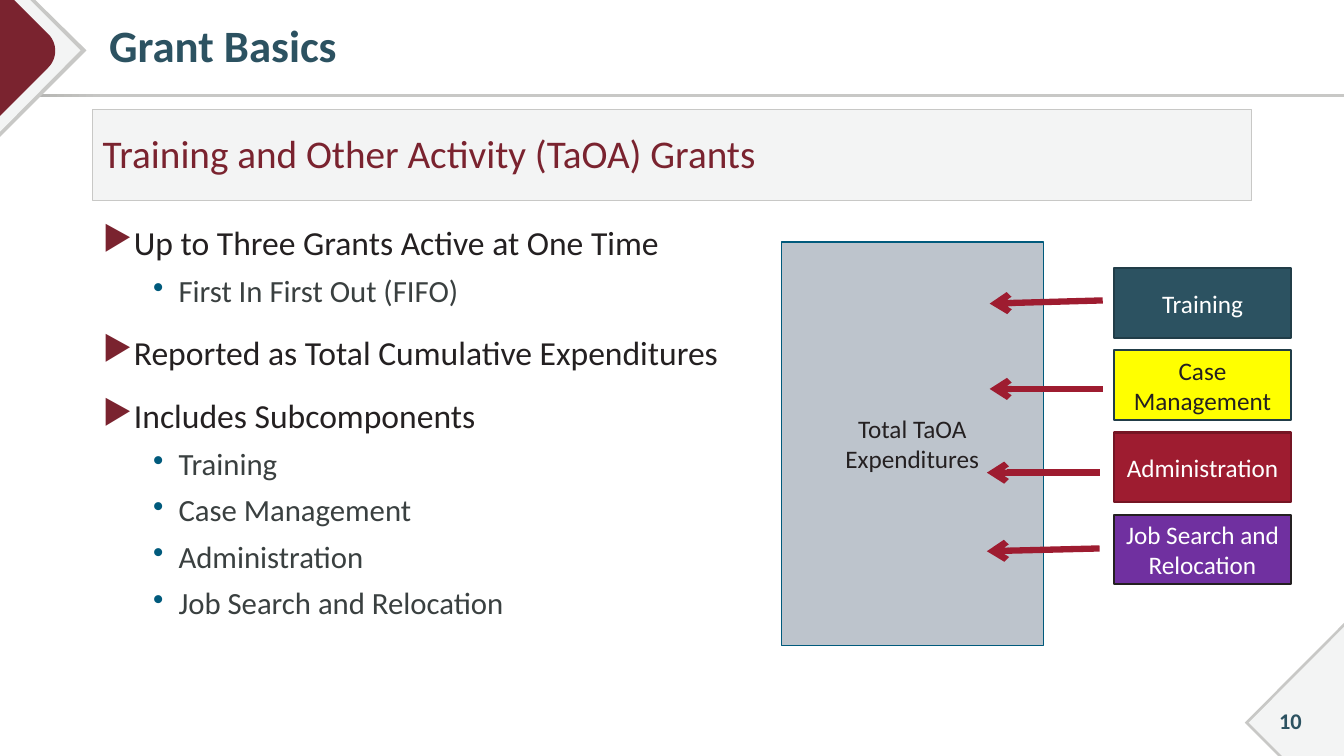
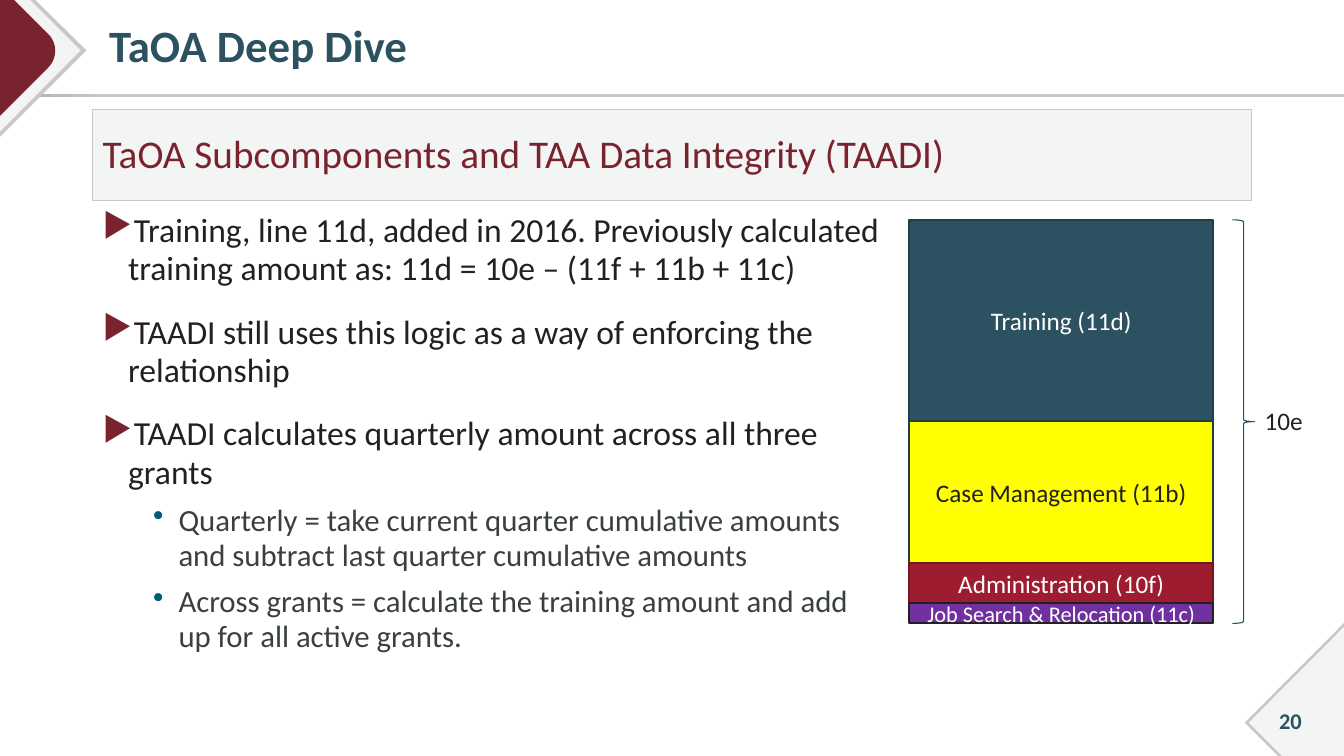
from collections import namedtuple

from lxml import etree
from pptx import Presentation
from pptx.dml.color import RGBColor
from pptx.enum.shapes import MSO_CONNECTOR, MSO_SHAPE
from pptx.enum.text import MSO_ANCHOR, PP_ALIGN
from pptx.oxml.ns import qn
from pptx.util import Cm, Pt

RECTANGLE = MSO_SHAPE.RECTANGLE
RIGHT_BRACE = MSO_SHAPE.RIGHT_BRACE
STRAIGHT = MSO_CONNECTOR.STRAIGHT
TOP, MIDDLE = MSO_ANCHOR.TOP, MSO_ANCHOR.MIDDLE
LEFT, CENTER = PP_ALIGN.LEFT, PP_ALIGN.CENTER

FONT = "Calibri"
SLIDE_WIDTH, SLIDE_HEIGHT = 33.87, 19.05

TEAL = RGBColor(0x2C, 0x52, 0x61)
DARK_TEAL = RGBColor(0x21, 0x3D, 0x48)
BLUE = RGBColor(0x00, 0x5A, 0x7C)
MAROON = RGBColor(0x7A, 0x23, 0x2F)
RED = RGBColor(0x9E, 0x1C, 0x30)
DARK_RED = RGBColor(0x75, 0x15, 0x24)
YELLOW = RGBColor(0xFF, 0xFF, 0x00)
PURPLE = RGBColor(0x70, 0x30, 0xA0)
INK = RGBColor(0x24, 0x20, 0x21)
SLATE = RGBColor(0x3A, 0x40, 0x40)
WHITE = RGBColor(0xFF, 0xFF, 0xFF)
PALE = RGBColor(0xF3, 0xF4, 0xF4)
GRAY = RGBColor(0xC8, 0xC8, 0xC6)
DARK_GRAY = RGBColor(0xAB, 0xAB, 0xA8)
BLUE_GRAY = RGBColor(0xBD, 0xC4, 0xCC)

# Each grant component keeps its colours on both slides
Component = namedtuple("Component", "fill outline text")
TRAINING = Component(TEAL, DARK_TEAL, WHITE)
CASE_MANAGEMENT = Component(YELLOW, DARK_TEAL, INK)
ADMINISTRATION = Component(RED, DARK_RED, WHITE)
JOB_SEARCH = Component(PURPLE, INK, WHITE)

# Bullet levels of the body text
Level = namedtuple("Level", "symbol symbol_color margin size color space")
LEVELS = (
    Level("▶", MAROON, 0.64, 24, INK, 18),
    Level("•", BLUE, 1.91, 22, SLATE, 8),
)
HANGING = 0.64


def add_run(paragraph, text, size, color, bold=False):
    run = paragraph.add_run()
    run.text = text
    run.font.name = FONT
    run.font.size = Pt(size)
    run.font.bold = bold
    run.font.color.rgb = color


def write_line(shape, text, size, color, align=LEFT, anchor=MIDDLE, bold=False, wrap=True):
    frame = shape.text_frame
    frame.word_wrap = wrap
    frame.vertical_anchor = anchor
    paragraph = frame.paragraphs[0]
    paragraph.alignment = align
    add_run(paragraph, text, size, color, bold)
    return frame


def add_textbox(slide, box):
    return slide.shapes.add_textbox(*map(Cm, box))


def add_preset(slide, kind, box, fill=None, outline=None, width=0.75):
    shape = slide.shapes.add_shape(kind, *map(Cm, box))
    shape.shadow.inherit = False
    if fill is None:
        shape.fill.background()
    else:
        shape.fill.solid()
        shape.fill.fore_color.rgb = fill
    if outline is None:
        shape.line.fill.background()
    else:
        shape.line.color.rgb = outline
        shape.line.width = Pt(width)
    return shape


def add_component(slide, box, label, component, size=18):
    shape = add_preset(slide, RECTANGLE, box, component.fill, component.outline, 1.5)
    write_line(shape, label, size, component.text, CENTER)


def add_outline(slide, points, fill):
    start, *rest = [(Cm(x), Cm(y)) for x, y in points]
    builder = slide.shapes.build_freeform(*start)
    builder.add_line_segments(rest, close=True)
    shape = builder.convert_to_shape()
    shape.shadow.inherit = False
    shape.fill.solid()
    shape.fill.fore_color.rgb = fill
    shape.line.fill.background()


def curve_points(controls, steps=16):
    """Points along a cubic Bezier curve."""
    points = []
    for step in range(steps + 1):
        t = step / steps
        weights = ((1 - t) ** 3, 3 * t * (1 - t) ** 2, 3 * t**2 * (1 - t), t**3)
        points.append(tuple(sum(w * c for w, c in zip(weights, axis)) for axis in zip(*controls)))
    return points


def add_arrow(slide, start, end):
    connector = slide.shapes.add_connector(STRAIGHT, *map(Cm, start + end))
    connector.line.color.rgb = RED
    connector.line.width = Pt(4.5)
    properties = connector.element.spPr
    etree.SubElement(properties.find(qn("a:ln")), qn("a:tailEnd"), type="arrow")
    etree.SubElement(properties, qn("a:effectLst"))


def set_bullet(paragraph, level):
    properties = paragraph._p.get_or_add_pPr()
    properties.set("marL", str(Cm(level.margin)))
    properties.set("indent", str(-Cm(HANGING)))
    color = etree.SubElement(properties, qn("a:buClr"))
    etree.SubElement(color, qn("a:srgbClr"), val=str(level.symbol_color))
    etree.SubElement(properties, qn("a:buChar"), char=level.symbol)


def add_bullets(slide, box, items):
    frame = add_textbox(slide, box).text_frame
    frame.word_wrap = True
    for index, (depth, text) in enumerate(items):
        level = LEVELS[depth]
        paragraph = frame.add_paragraph() if index else frame.paragraphs[0]
        set_bullet(paragraph, level)
        paragraph.line_spacing = 0.95
        if index:
            paragraph.space_before = Pt(level.space)
        add_run(paragraph, text, level.size, level.color)


def add_decoration(slide):
    # Rule under the title
    rule = add_preset(slide, RECTANGLE, (0, 2.36, SLIDE_WIDTH, 0.08), GRAY)
    rule.fill.gradient()
    rule.fill.gradient_angle = 0
    for stop, color, position in zip(rule.fill.gradient_stops, (DARK_GRAY, GRAY), (0, 0.08)):
        stop.color.rgb = color
        stop.position = position
    # Layered diamond at the top left
    add_outline(slide, [(0, 0), (0.89, 0), (2.18, 1.27), (0, 3.45)], GRAY)
    add_outline(slide, [(0, 0), (0.76, 0), (2.03, 1.27), (0, 3.32)], PALE)
    rounded_tip = curve_points([(1.22, 0.86), (1.45, 1.09), (1.45, 1.47), (1.22, 1.7)])
    add_outline(slide, [(0, 0), (0.36, 0), *rounded_tip, (0, 2.92)], MAROON)
    # Page corner at the bottom right
    for inset, color in ((0, GRAY), (0.1, PALE)):
        add_outline(slide, [
            (SLIDE_WIDTH, 15.7 + inset), (SLIDE_WIDTH, SLIDE_HEIGHT),
            (32.21 + inset, SLIDE_HEIGHT), (31.37 + inset, 18.21),
        ], color)


def add_base_slide(presentation, title, subtitle, number):
    slide = presentation.slides.add_slide(presentation.slide_layouts[6])
    add_decoration(slide)
    write_line(add_textbox(slide, (31.62, 17.65, 1.8, 1.02)), number, 16, TEAL, CENTER, bold=True)
    heading = add_textbox(slide, (2.24, 0.13, 30.78, 2.18))
    frame = write_line(heading, title, 32, TEAL, bold=True)
    frame.margin_left = Cm(0.51)
    frame.paragraphs[0].line_spacing = 0.9
    banner = add_preset(slide, RECTANGLE, (2.34, 2.77, 29.21, 2.29), PALE, GRAY)
    frame = write_line(banner, subtitle, 28, MAROON)
    frame.paragraphs[0].line_spacing = 0.95
    return slide


def build_grant_basics(presentation):
    slide = add_base_slide(
        presentation, "Grant Basics", "Training and Other Activity (TaOA) Grants", "10")
    add_bullets(slide, (2.34, 5.54, 16.31, 11.66), [
        (0, "Up to Three Grants Active at One Time"),
        (1, "First In First Out (FIFO)"),
        (0, "Reported as Total Cumulative Expenditures"),
        (0, "Includes Subcomponents"),
        (1, "Training"),
        (1, "Case Management"),
        (1, "Administration"),
        (1, "Job Search and Relocation"),
    ])
    # Components flowing into the total
    total = add_preset(slide, RECTANGLE, (19.69, 6.1, 6.6, 10.16), BLUE_GRAY, BLUE, 0.79)
    write_line(total, "Total TaOA Expenditures", 18, INK, CENTER)
    flows = [
        ("Training", TRAINING, (27.79, 7.57), (24.94, 7.65)),
        ("Case Management", CASE_MANAGEMENT, (27.79, 9.8), (24.94, 9.8)),
        ("Administration", ADMINISTRATION, (27.71, 11.91), (24.87, 11.91)),
        ("Job Search and Relocation", JOB_SEARCH, (27.71, 13.82), (24.87, 13.89)),
    ]
    for index, (label, component, start, end) in enumerate(flows):
        add_component(slide, (28.07, 6.76 + index * 2.07, 4.47, 1.75), label, component)
        add_arrow(slide, start, end)


def build_deep_dive(presentation):
    slide = add_base_slide(
        presentation, "TaOA Deep Dive", "TaOA Subcomponents and TAA Data Integrity (TAADI)", "20")
    add_bullets(slide, (2.34, 5.21, 20.09, 11.66), [
        (0, "Training, line 11d, added in 2016. Previously calculated training amount as: "
            "11d = 10e – (11f + 11b + 11c)"),
        (0, "TAADI still uses this logic as a way of enforcing the relationship"),
        (0, "TAADI calculates quarterly amount across all three grants"),
        (1, "Quarterly = take current quarter cumulative amounts and subtract last quarter "
            "cumulative amounts"),
        (1, "Across grants = calculate the training amount and add up for all active grants."),
    ])
    # Stack of components, each starting where the last one ends
    stack_top = top = 5.54
    for label, component, height, size in (
        ("Training (11d)", TRAINING, 5.08, 18),
        ("Case Management (11b)", CASE_MANAGEMENT, 3.56, 18),
        ("Administration (10f)", ADMINISTRATION, 1.02, 18),
        ("Job Search & Relocation (11c)", JOB_SEARCH, 0.51, 16),
    ):
        add_component(slide, (22.91, top, 7.67, height), label, component, size)
        top += height
    # Brace marking the total
    add_preset(slide, RIGHT_BRACE, (31.06, stack_top, 0.56, top - stack_top), None, TEAL, 0.79)
    write_line(add_textbox(slide, (31.62, 10.08, 1.47, 1.02)), "10e", 18, INK,
               anchor=TOP, wrap=False)


def main():
    presentation = Presentation()
    presentation.slide_width = Cm(SLIDE_WIDTH)
    presentation.slide_height = Cm(SLIDE_HEIGHT)
    build_grant_basics(presentation)
    build_deep_dive(presentation)
    presentation.save("out.pptx")


if __name__ == "__main__":
    main()
